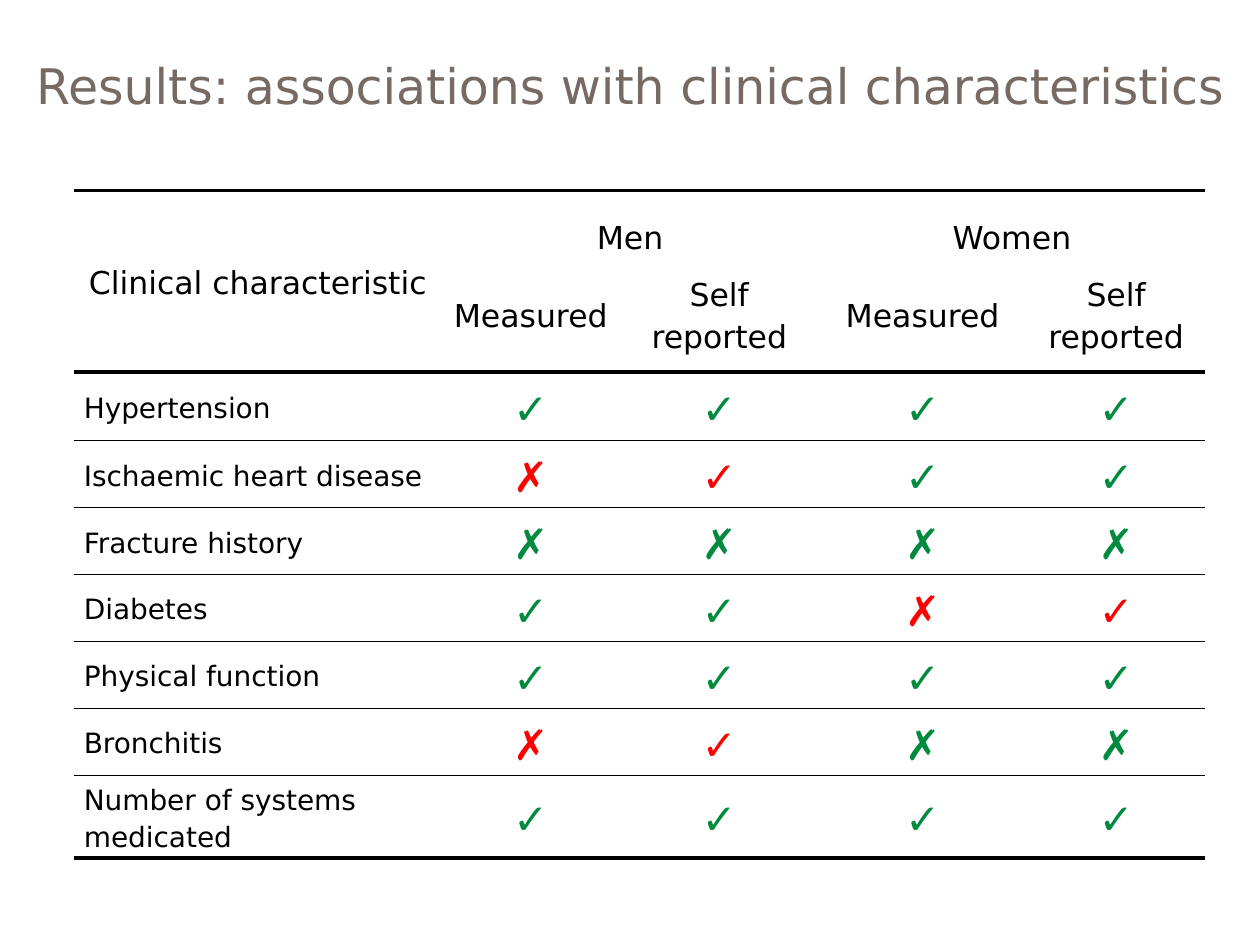
from lxml.etree import SubElement
from pptx import Presentation
from pptx.dml.color import RGBColor
from pptx.enum.text import MSO_ANCHOR as Anchor, PP_ALIGN as Align
from pptx.oxml.ns import qn
from pptx.util import Cm, Pt

FONT = "DejaVu Sans"
BLACK, GREEN, RED, TAUPE = "000000", "008A3E", "FF0000", "766A62"
THICK, THIN = 2.25, 0.25


def write(frame, text, size, colour, align=Align.CENTER, spacing=1.15):
    """Write each line of text as a paragraph of one run."""
    for i, line in enumerate(text.split("\n")):
        paragraph = frame.paragraphs[0] if i == 0 else frame.add_paragraph()
        paragraph.alignment = align
        paragraph.line_spacing = spacing
        run = paragraph.add_run()
        run.text = line
        run.font.name = FONT
        run.font.size = Pt(size)
        run.font.color.rgb = RGBColor.from_string(colour)


def rule_cell(cell, top, bottom):
    """Draw the rules above and below a cell; None leaves a side open."""
    properties = cell._tc.get_or_add_tcPr()
    for side, width in (("L", None), ("R", None), ("T", top), ("B", bottom)):
        line = SubElement(properties, qn(f"a:ln{side}"))
        if width is None:
            SubElement(line, qn("a:noFill"))
        else:
            line.set("w", str(Pt(width)))
            fill = SubElement(line, qn("a:solidFill"))
            SubElement(fill, qn("a:srgbClr")).set("val", BLACK)


prs = Presentation()
prs.slide_width, prs.slide_height = Cm(25.4), Cm(19.05)
slide = prs.slides.add_slide(prs.slide_layouts[6])

# Title
title = slide.shapes.add_textbox(0, Cm(0.53), Cm(25.4), Cm(2.36)).text_frame
title.word_wrap = True
title.vertical_anchor = Anchor.MIDDLE
write(title, "Results: associations with clinical characteristics", 28, TAUPE,
      spacing=1.0)

# Men measured, men self reported, women measured, women self reported
findings = [
    ("Hypertension", "✓✓✓✓"),
    ("Ischaemic heart disease", "✗✓✓✓"),
    ("Fracture history", "✗✗✗✗"),
    ("Diabetes", "✓✓✗✓"),
    ("Physical function", "✓✓✓✓"),
    ("Bronchitis", "✗✓✗✗"),
    ("Number of systems medicated", "✓✓✓✓"),
]
widths = [7.4, 3.6, 4, 4.2, 3.6]
heights = [1.33, 2.33, 1.38] + [1.35] * 5 + [1.67]
last = len(heights) - 1

# Table grid
table = slide.shapes.add_table(len(heights), len(widths), Cm(1.5), Cm(3.84),
                               Cm(sum(widths)), Cm(sum(heights))).table
table.first_row = table.horz_banding = False
for column, width in zip(table.columns, widths):
    column.width = Cm(width)
for row, height in zip(table.rows, heights):
    row.height = Cm(height)

# Rules: thick around the header and at the foot, thin between findings
rules = [THICK, None, THICK] + [THIN] * (last - 2) + [THICK]
for r, row in enumerate(table.rows):
    for cell in row.cells:
        rule_cell(cell, rules[r], rules[r + 1])
        cell.fill.background()
        cell.vertical_anchor = Anchor.MIDDLE
        cell.margin_left = cell.margin_right = Cm(0.19)
        cell.margin_top = cell.margin_bottom = 0

# Header
table.cell(0, 0).merge(table.cell(1, 0))
write(table.cell(0, 0).text_frame, "Clinical characteristic", 18, BLACK)
for c, sex in ((1, "Men"), (3, "Women")):
    group = table.cell(0, c)
    group.merge(table.cell(0, c + 1))
    group.vertical_anchor = Anchor.BOTTOM
    write(group.text_frame, sex, 18, BLACK)
    write(table.cell(1, c).text_frame, "Measured", 18, BLACK)
    write(table.cell(1, c + 1).text_frame, "Self\nreported", 18, BLACK)

# Findings: a pair is red where measured and self reported disagree
for r, (characteristic, marks) in enumerate(findings, start=2):
    write(table.cell(r, 0).text_frame, characteristic, 16, BLACK, Align.LEFT)
    for c in (0, 2):
        pair = marks[c:c + 2]
        colour = GREEN if pair[0] == pair[1] else RED
        for offset, mark in enumerate(pair, start=1):
            write(table.cell(r, c + offset).text_frame, mark, 24, colour)

prs.save("out.pptx")
